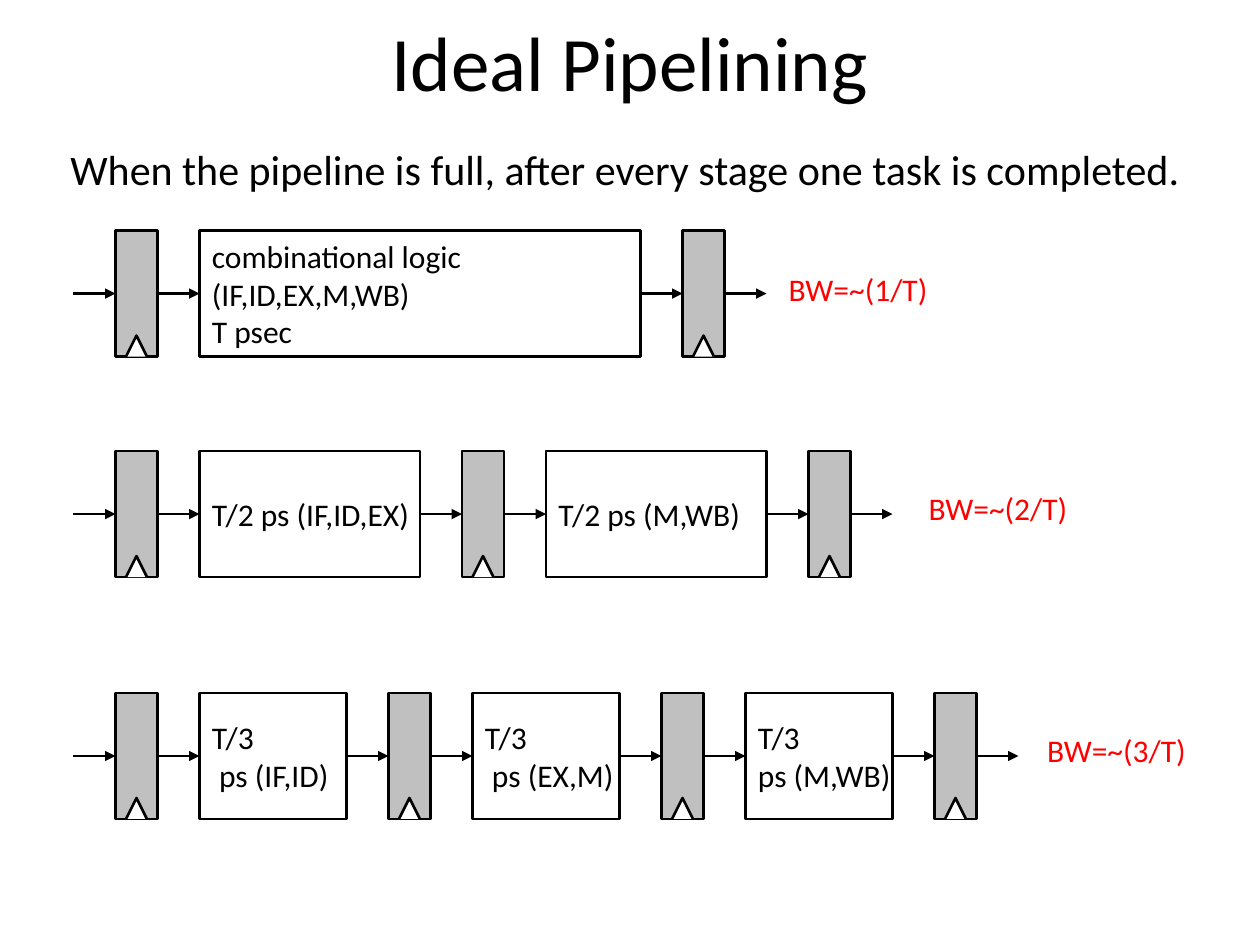
import pptx
import pptx.util
import pptx.dml.color
import pptx.enum.shapes
import pptx.enum.text
import pptx.oxml
import pptx.oxml.ns
from pptx.util import Inches

BLACK = pptx.dml.color.RGBColor(0x00, 0x00, 0x00)
WHITE = pptx.dml.color.RGBColor(0xFF, 0xFF, 0xFF)
GRAY = pptx.dml.color.RGBColor(0xC0, 0xC0, 0xC0)
RED = pptx.dml.color.RGBColor(0xFF, 0x00, 0x00)

LEFT = pptx.enum.text.PP_ALIGN.LEFT
CENTER = pptx.enum.text.PP_ALIGN.CENTER
TOP = pptx.enum.text.MSO_ANCHOR.TOP
MIDDLE = pptx.enum.text.MSO_ANCHOR.MIDDLE

START = 7 / 12  # left end of every pipeline
STEP = 1 / 3  # width of a register and length of an arrow
HEIGHT = 1
LOGIC_WIDTH = 3.5  # shared equally by the stages of a pipeline
LEFT_SIDE, RIGHT_SIDE = 1, 3


class PipelineSlide:
    def __init__(self, slide, font="Calibri", line_width=1.5):
        self.shapes = slide.shapes
        self.font = font
        self.line_width = pptx.util.Pt(line_width)

    def fill_text(self, shape, paragraphs, size, color=BLACK, align=LEFT,
                  anchor=MIDDLE, wrap=False):
        frame = shape.text_frame
        frame.word_wrap = wrap
        frame.vertical_anchor = anchor
        for index, text in enumerate(paragraphs):
            para = frame.add_paragraph() if index else frame.paragraphs[0]
            para.text = text
            para.alignment = align
            for span in para.runs:
                span.font.name = self.font
                span.font.size = pptx.util.Pt(size)
                span.font.color.rgb = color

    def text(self, left, top, width, height, text, size, **style):
        box = self.shapes.add_textbox(
            Inches(left), Inches(top), Inches(width), Inches(height))
        self.fill_text(box, [text], size, **style)
        return box

    def label(self, left, top, text):
        box = self.text(left, top, 1.48, 0.4, text, 18, color=RED, anchor=TOP)
        frame = box.text_frame
        frame.margin_left = frame.margin_right = 0
        frame.margin_top = frame.margin_bottom = 0
        frame.auto_size = pptx.enum.text.MSO_AUTO_SIZE.SHAPE_TO_FIT_TEXT

    def paint(self, shape, fill):
        shape.shadow.inherit = False
        shape.fill.solid()
        shape.fill.fore_color.rgb = fill
        shape.line.color.rgb = BLACK
        shape.line.width = self.line_width

    def block(self, left, top, width, fill):
        box = self.shapes.add_shape(
            pptx.enum.shapes.MSO_SHAPE.RECTANGLE,
            Inches(left), Inches(top), Inches(width), Inches(HEIGHT))
        self.paint(box, fill)
        return box

    def register(self, left, top):
        box = self.block(left, top, STEP, GRAY)
        # Clock mark: an open wedge on the bottom edge
        bottom, half = top + HEIGHT, STEP / 4
        middle = left + STEP / 2
        builder = self.shapes.build_freeform(
            Inches(middle - half), Inches(bottom))
        builder.add_line_segments(
            [(Inches(middle), Inches(bottom - STEP / 2)),
             (Inches(middle + half), Inches(bottom))], close=False)
        self.paint(builder.convert_to_shape(), WHITE)
        return box

    def stage(self, left, top, width, paragraphs):
        box = self.block(left, top, width, WHITE)
        self.fill_text(box, paragraphs, 18)
        return box

    def arrow(self, left, y, source=None, target=None):
        line = self.shapes.add_connector(
            pptx.enum.shapes.MSO_CONNECTOR.STRAIGHT,
            Inches(left), Inches(y), Inches(left + STEP), Inches(y))
        if source is not None:
            line.begin_connect(source, RIGHT_SIDE)
        if target is not None:
            line.end_connect(target, LEFT_SIDE)
        line.line.color.rgb = BLACK
        line.line.width = self.line_width
        namespace = pptx.oxml.ns.nsdecls("a")
        properties = line.element.spPr
        properties.find(pptx.oxml.ns.qn("a:ln")).append(
            pptx.oxml.parse_xml(f'<a:tailEnd {namespace} type="triangle"/>'))
        properties.append(pptx.oxml.parse_xml(f"<a:effectLst {namespace}/>"))

    def pipeline(self, top, stages):
        width = LOGIC_WIDTH / len(stages)
        left, middle = START, top + HEIGHT / 2
        previous = None
        for paragraphs in stages + [None]:
            register = self.register(left + STEP, top)
            self.arrow(left, middle, previous, register)
            left += 2 * STEP
            if paragraphs is None:
                self.arrow(left, middle, register)
            else:
                previous = self.stage(left + STEP, top, width, paragraphs)
                self.arrow(left, middle, register, previous)
                left += STEP + width


def main():
    deck = pptx.Presentation()
    deck.slide_width, deck.slide_height = Inches(10), Inches(7.5)
    page = PipelineSlide(deck.slides.add_slide(deck.slide_layouts[6]))

    # Title and statement
    page.text(0.5, 0, 9, 0.97, "Ideal Pipelining", 44,
              align=CENTER, wrap=True)
    page.text(0.25, 1.09, 9.42, 5.68,
              "When the pipeline is full, after every stage one task is completed.",
              24, align=CENTER, anchor=TOP, wrap=True)

    # Pipelines with one, two and three stages
    page.pipeline(1.83, [["combinational logic \n(IF,ID,EX,M,WB)", "T psec"]])
    page.pipeline(3.58, [["T/2 ps (IF,ID,EX)"], ["T/2 ps (M,WB)"]])
    page.pipeline(5.5, [["T/3", " ps (IF,ID)"], ["T/3", " ps (EX,M)"],
                        ["T/3", "ps (M,WB)"]])

    # Bandwidth of each pipeline
    page.label(6.26, 2.14, "BW=~(1/T)")
    page.label(7.37, 3.88, "BW=~(2/T)")
    page.label(8.31, 5.8, "BW=~(3/T)")

    deck.save("out.pptx")


if __name__ == "__main__":
    main()
